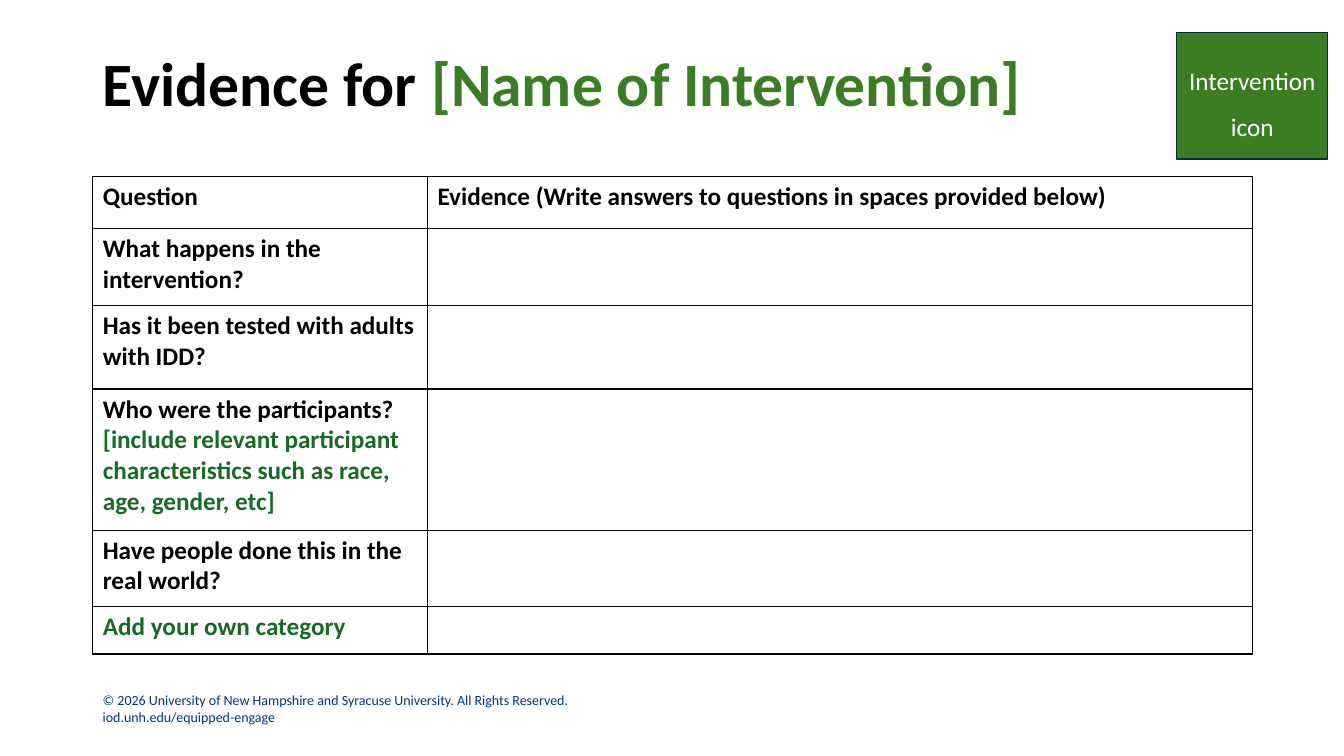
from lxml.etree import SubElement
from pptx import Presentation
from pptx.dml.color import RGBColor
from pptx.enum.shapes import MSO_SHAPE
from pptx.enum.text import MSO_ANCHOR, PP_ALIGN
from pptx.oxml.ns import qn
from pptx.util import Pt

PX = 9144  # 100 px to the inch
BLACK = RGBColor(0x00, 0x00, 0x00)
WHITE = RGBColor(0xFF, 0xFF, 0xFF)
GREEN = RGBColor(0x3B, 0x7D, 0x23)
DARK_GREEN = RGBColor(0x19, 0x6B, 0x24)
NAVY = RGBColor(0x09, 0x2A, 0x39)
BLUE = RGBColor(0x01, 0x35, 0x91)

LEFT, WIDTH = 92, 1150
COLUMN_WIDTHS = [332, 818]
# Row height, then the coloured runs of each filled cell
ROWS = [
    (52, [[("Question", BLACK)],
          [("Evidence (Write answers to questions in spaces provided below)", BLACK)]]),
    (76, [[("What happens in the intervention?", BLACK)], []]),
    (83, [[("Has it been tested with adults with IDD?", BLACK)], []]),
    (140, [[("Who were the participants? ", BLACK),
            ("[include relevant participant characteristics such as race, "
             "age, gender, etc]", DARK_GREEN)], []]),
    (76, [[("Have people done this in the real world?", BLACK)], []]),
    (47, [[("Add your own category", DARK_GREEN)], []]),
]


def write_runs(paragraph, runs, size, bold=False):
    paragraph.font.name = "Calibri"
    paragraph.font.size = Pt(size)
    paragraph.font.bold = bold
    for text, color in runs:
        run = paragraph.add_run()
        run.text = text
        run.font.color.rgb = color


def outline_cell(cell):
    properties = cell._tc.get_or_add_tcPr()
    for side in ("a:lnL", "a:lnR", "a:lnT", "a:lnB"):
        line = SubElement(properties, qn(side), w=str(Pt(1)))
        fill = SubElement(line, qn("a:solidFill"))
        SubElement(fill, qn("a:srgbClr"), val=str(BLACK))


presentation = Presentation()
presentation.slide_width = 1333 * PX
presentation.slide_height = 750 * PX
slide = presentation.slides.add_slide(presentation.slide_layouts[6])

# Footer
footer = slide.shapes.add_textbox(LEFT * PX, 681 * PX, 535 * PX, 44 * PX)
footer.text_frame.word_wrap = True
paragraph = footer.text_frame.paragraphs[0]
write_runs(paragraph, [("© 2026 University of New Hampshire and Syracuse University. "
                        "All Rights Reserved.", BLUE)], 10)
paragraph.add_line_break()
write_runs(paragraph, [("iod.unh.edu/equipped-engage", BLUE)], 10)

# Title
title = slide.shapes.add_textbox(LEFT * PX, 15 * PX, WIDTH * PX, 109 * PX)
title.text_frame.word_wrap = True
title.text_frame.vertical_anchor = MSO_ANCHOR.BOTTOM
paragraph = title.text_frame.paragraphs[0]
paragraph.line_spacing = 0.9
write_runs(paragraph, [("Evidence for ", BLACK), ("[Name of Intervention]", GREEN)],
           44, bold=True)

# Icon box
icon = slide.shapes.add_shape(MSO_SHAPE.RECTANGLE, 1167 * PX, 32 * PX, 150 * PX, 126 * PX)
icon.shadow.inherit = False
icon.fill.solid()
icon.fill.fore_color.rgb = GREEN
icon.line.color.rgb = NAVY
icon.line.width = Pt(1)
icon.text_frame.word_wrap = True
icon.text_frame.vertical_anchor = MSO_ANCHOR.MIDDLE
paragraph = icon.text_frame.paragraphs[0]
paragraph.alignment = PP_ALIGN.CENTER
paragraph.line_spacing = 1.5
write_runs(paragraph, [("Intervention icon", WHITE)], 18)

# Evidence table
table_height = sum(height for height, cells in ROWS)
table = slide.shapes.add_table(len(ROWS), len(COLUMN_WIDTHS), LEFT * PX, 175 * PX,
                               WIDTH * PX, table_height * PX).table
table.first_row = False
table.horz_banding = False
for column, width in zip(table.columns, COLUMN_WIDTHS):
    column.width = width * PX
for row, (height, cells) in zip(table.rows, ROWS):
    row.height = height * PX
    for cell, runs in zip(row.cells, cells):
        outline_cell(cell)
        cell.fill.background()
        write_runs(cell.text_frame.paragraphs[0], runs, 18, bold=True)

presentation.save("out.pptx")
